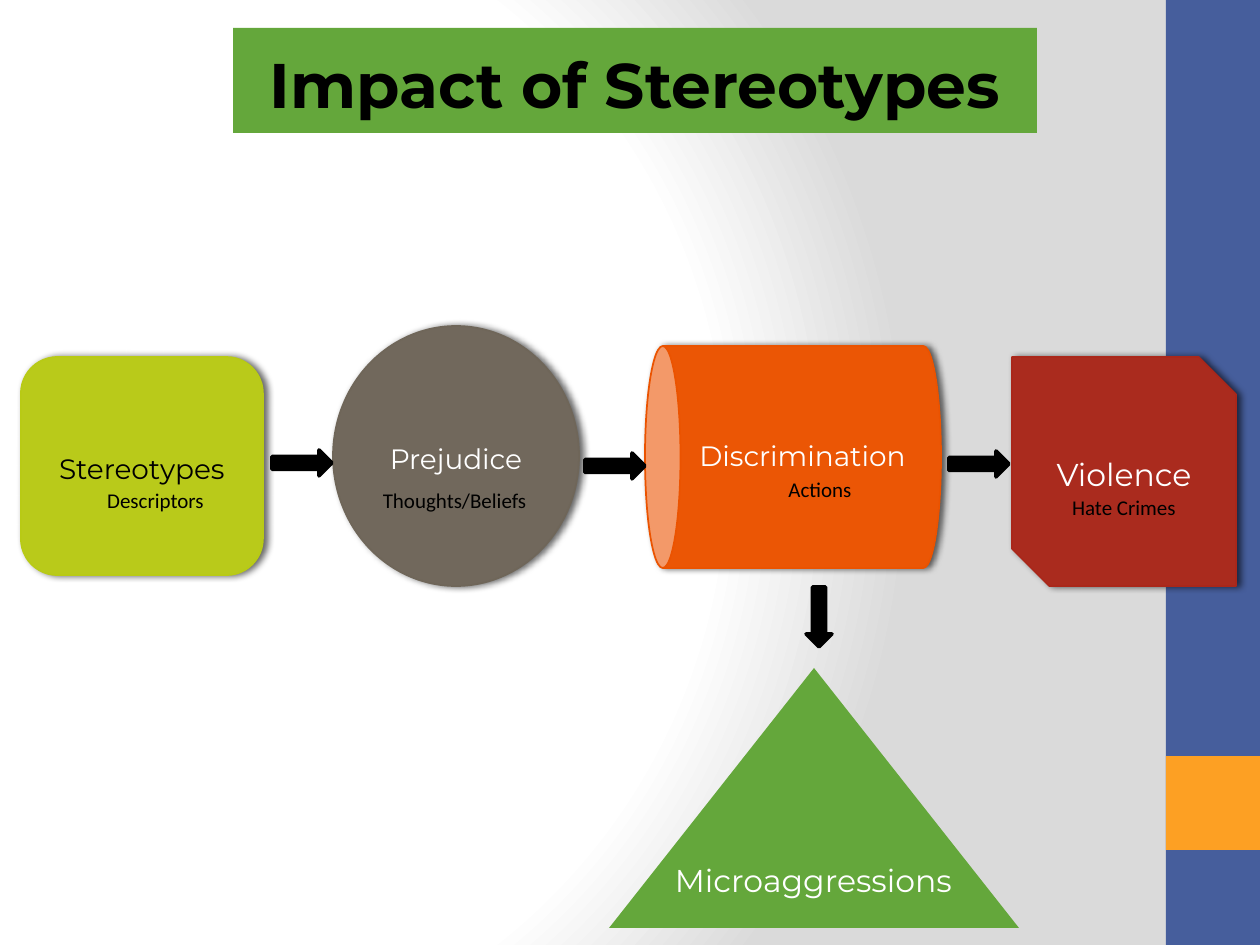
from dataclasses import dataclass

from pptx import Presentation
from pptx.dml.color import RGBColor
from pptx.enum.shapes import MSO_SHAPE as Preset
from pptx.enum.text import MSO_ANCHOR as Anchor, MSO_AUTO_SIZE as AutoSize, PP_ALIGN as Align
from pptx.oxml import parse_xml
from pptx.oxml.ns import nsdecls
from pptx.util import Emu, Pt

EMU_PER_PX = 914400 / 126


@dataclass(frozen=True)
class Theme:
    """Colours, fonts and type sizes of the slide."""
    black: str = "000000"
    white: str = "FFFFFF"
    grey: str = "DADADA"
    blue: str = "465E9C"
    amber: str = "FDA023"
    green: str = "64A73B"
    lime: str = "B9CA1A"
    lime_edge: str = "B8CA15"
    stone: str = "71685C"
    stone_edge: str = "6F6659"
    orange: str = "EB5605"
    orange_edge: str = "EB5300"
    red: str = "AA2B1E"
    red_edge: str = "AA271A"
    heading: str = "Montserrat"
    body: str = "Calibri"
    title_size: int = 36
    large: int = 18
    medium: int = 16
    small: int = 12


THEME = Theme()


def px(value):
    """Turn px into EMU."""
    return Emu(round(value * EMU_PER_PX))


def apply(target, values):
    """Set each attribute of target from a dict."""
    for name, value in values.items():
        setattr(target, name, value)


def place(shape, box):
    """Move a shape to a px box."""
    apply(shape, dict(zip(("left", "top", "width", "height"), map(px, box))))


def inside(box, offset):
    """Return the px box that lies at an offset within another box."""
    return box[0] + offset[0], box[1] + offset[1], offset[2], offset[3]


def write(shape, text, size, color, font=THEME.heading, bold=False, align=Align.CENTER):
    """Write one formatted paragraph into a shape."""
    paragraph = shape.text_frame.paragraphs[0]
    apply(paragraph, {"alignment": align, "line_spacing": 1.15,
                      "space_before": Pt(0), "space_after": Pt(10)})
    run = paragraph.add_run()
    run.text = text
    apply(run.font, {"name": font, "size": Pt(size), "bold": bold})
    run.font.color.rgb = RGBColor.from_string(color)


def add_label(slide, box, text, size, color, **format_values):
    """Add a wrapping text box."""
    label = slide.shapes.add_textbox(*map(px, box))
    label.text_frame.word_wrap = True
    write(label, text, size, color, **format_values)


def add_figure(slide, preset, box, fill, edge=None, weight=1, rotation=0):
    """Add a filled preset shape that covers the box once it is rotated."""
    left, top, width, height = box
    if rotation in (90, 270):
        shift = (width - height) / 2
        left, top, width, height = left + shift, top - shift, height, width
    shape = slide.shapes.add_shape(preset, *map(px, (left, top, width, height)))
    shape.rotation = rotation
    shape.shadow.inherit = False
    shape.fill.solid()
    shape.fill.fore_color.rgb = RGBColor.from_string(fill)
    if edge:
        shape.line.color.rgb = RGBColor.from_string(edge)
        shape.line.width = Pt(weight)
    else:
        shape.line.fill.background()
    return shape


def add_shadow(shape):
    """Cast a soft shadow to the right of a shape."""
    effects = shape.element.spPr.find("{*}effectLst")
    effects.append(parse_xml(
        f'<a:outerShdw {nsdecls("a")} blurRad="{Pt(4)}" dist="{Pt(2)}" dir="0" rotWithShape="0">'
        f'<a:srgbClr val="{THEME.black}"><a:alpha val="60000"/></a:srgbClr></a:outerShdw>'))


def add_background(slide):
    """Fill the slide with a circular white to grey gradient."""
    stops = "".join(f'<a:gs pos="{position * 1000}"><a:srgbClr val="{color}"/></a:gs>'
                    for position, color in ((0, THEME.white), (75, THEME.white), (100, THEME.grey)))
    slide.element.cSld.insert(0, parse_xml(
        f'<p:bg {nsdecls("p", "a")}><p:bgPr><a:gradFill rotWithShape="1"><a:gsLst>{stops}</a:gsLst>'
        '<a:path path="circle"><a:fillToRect l="20000" t="50000" r="100000" b="50000"/></a:path>'
        '</a:gradFill><a:effectLst/></p:bgPr></p:bg>'))


def add_side_band(slide, box):
    """Add the blue band with its amber square."""
    width = box[2]
    add_figure(slide, Preset.RECTANGLE, box, THEME.blue)
    add_figure(slide, Preset.RECTANGLE, inside(box, (0, 756, width, width)), THEME.amber)


def add_title(slide, box):
    """Format the title placeholder as a green banner."""
    title = slide.shapes.title
    place(title, box)
    title.fill.solid()
    title.fill.fore_color.rgb = RGBColor.from_string(THEME.green)
    apply(title.text_frame, {"word_wrap": False, "vertical_anchor": Anchor.TOP,
                             "auto_size": AutoSize.SHAPE_TO_FIT_TEXT})
    write(title, "Impact of Stereotypes", THEME.title_size, THEME.black, bold=True)


def add_stage(slide, box, preset, colors, name, size, name_color, caption, caption_offset):
    """Add one stage: a shadowed shape with its name and caption."""
    shape = add_figure(slide, preset, box, *colors)
    add_shadow(shape)
    write(shape, name, size, name_color)
    add_label(slide, inside(box, caption_offset), caption, THEME.small, THEME.black, font=THEME.body)


def add_discrimination(slide, box):
    """Add the lying can with its upright name and caption."""
    can = add_figure(slide, Preset.CAN, box, THEME.orange, THEME.orange_edge, rotation=270)
    can.adjustments[0] = 0.16
    add_shadow(can)
    add_label(slide, inside(box, (42, 81, 255, 77)), "Discrimination",
              THEME.medium, THEME.white, align=Align.LEFT)
    add_label(slide, inside(box, (125, 121, 100, 38)), "Actions",
              THEME.small, THEME.black, font=THEME.body)


def add_microaggressions(slide, box):
    """Add the green triangle and its name."""
    add_figure(slide, Preset.ISOSCELES_TRIANGLE, box, THEME.green)
    add_label(slide, inside(box, (-23, 181, 455, 97)), "Microaggressions", THEME.large, THEME.white)


def add_arrows(slide):
    """Add the arrows that lead from stage to stage."""
    for left, top, width, height, rotation in (
            (272, 450, 60, 26, 0), (585, 453, 60, 26, 0),
            (949, 451, 60, 26, 0), (806, 587, 26, 60, 90)):
        add_figure(slide, Preset.RIGHT_ARROW, (left, top, width, height),
                   THEME.black, THEME.black, 2, rotation)


def main():
    """Build the slide and save it."""
    presentation = Presentation()
    apply(presentation, {"slide_width": px(1260), "slide_height": px(945)})
    slide = presentation.slides.add_slide(presentation.slide_layouts[5])
    add_background(slide)
    add_side_band(slide, (1166, 0, 94, 945))
    add_title(slide, (233, 28, 804, 96))
    add_stage(slide, (21, 357, 242, 218), Preset.ROUNDED_RECTANGLE, (THEME.lime, THEME.lime_edge),
              "Stereotypes", THEME.medium, THEME.black, "Descriptors", (71, 121, 127, 38))
    add_stage(slide, (333, 326, 246, 260), Preset.OVAL, (THEME.stone, THEME.stone_edge),
              "Prejudice", THEME.medium, THEME.white, "Thoughts/Beliefs", (31, 152, 181, 38))
    add_discrimination(slide, (645, 346, 296, 222))
    add_microaggressions(slide, (609, 668, 410, 260))
    add_stage(slide, (1012, 357, 224, 229), Preset.SNIP_2_DIAG_RECTANGLE, (THEME.red, THEME.red_edge),
              "Violence", THEME.large, THEME.white, "Hate Crimes", (36, 128, 152, 38))
    add_arrows(slide)
    presentation.save("out.pptx")


if __name__ == "__main__":
    main()
